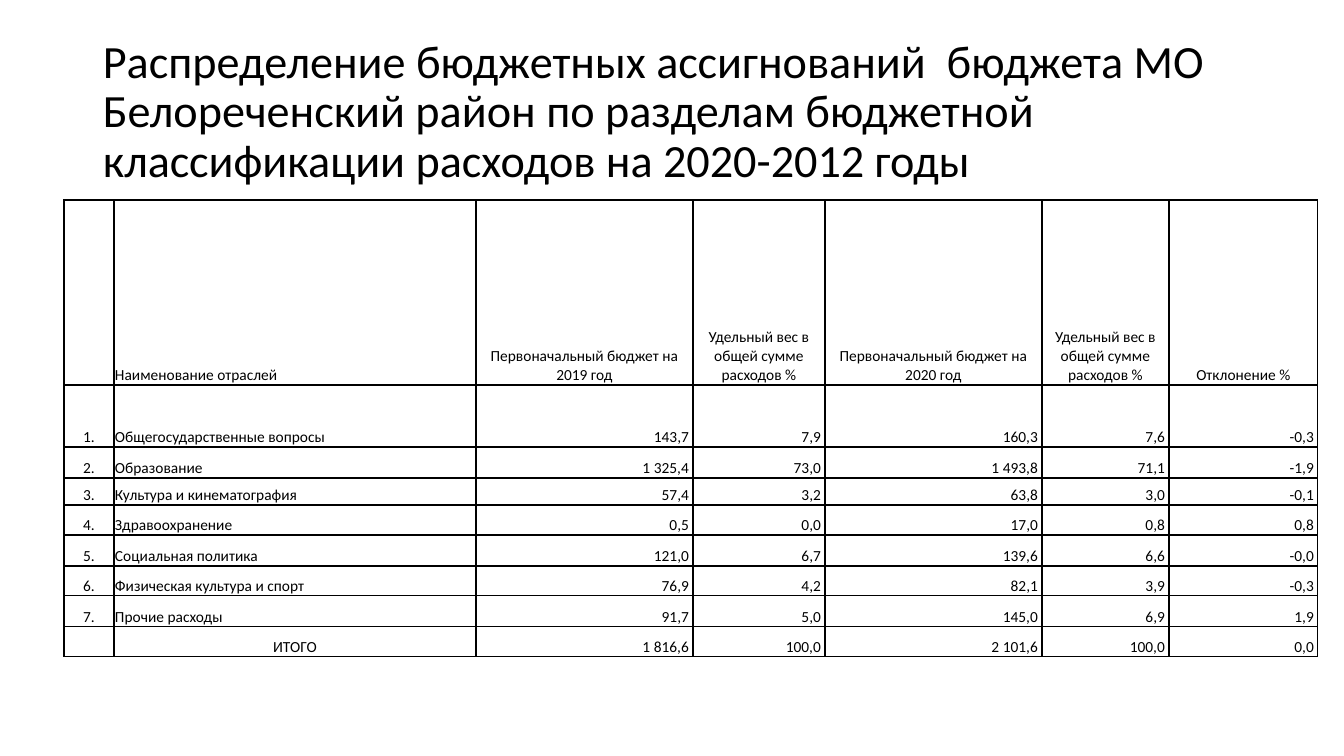
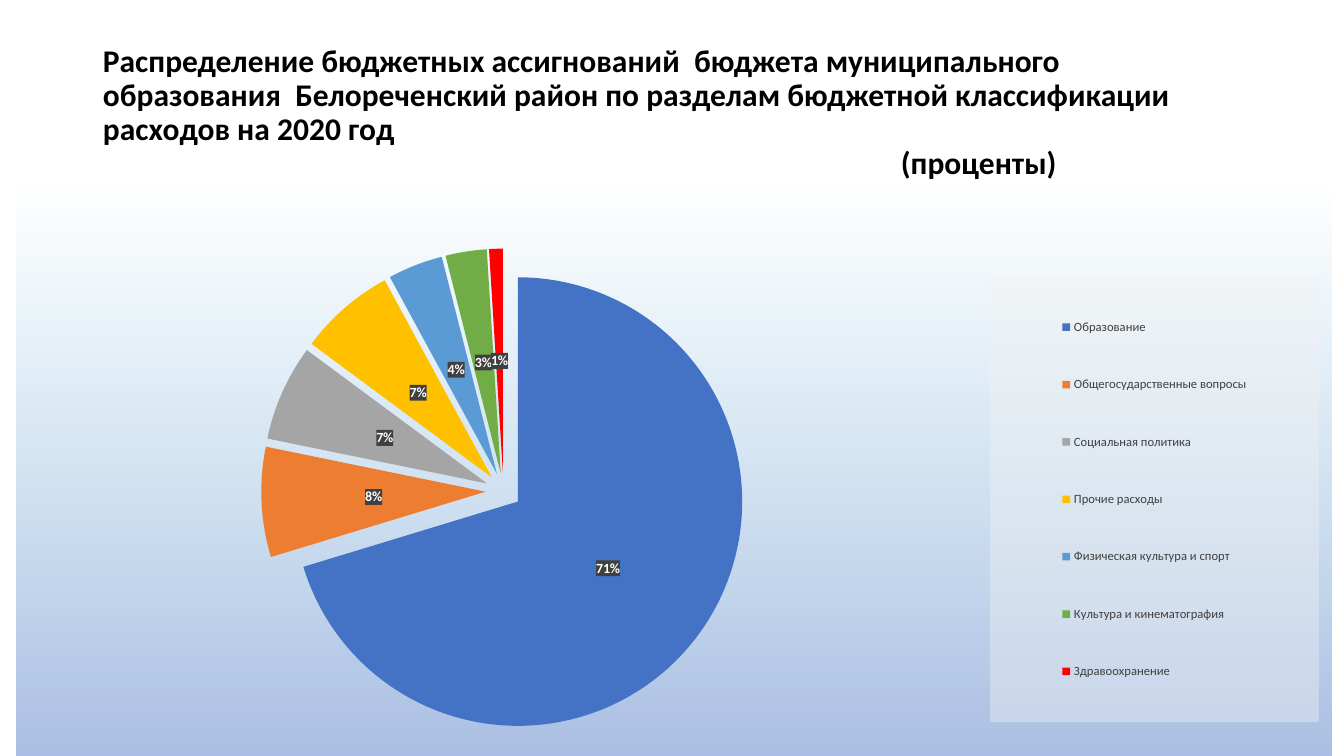
"""Build two slides on a district budget: a spending table and a pie chart."""
from dataclasses import dataclass

from lxml.etree import SubElement
from pptx import Presentation
from pptx.chart.data import CategoryChartData
from pptx.dml.color import RGBColor as Rgb
from pptx.enum.chart import XL_CHART_TYPE as ChartType
from pptx.enum.chart import XL_LABEL_POSITION as LabelPos
from pptx.enum.chart import XL_LEGEND_POSITION as LegendPos
from pptx.enum.text import MSO_ANCHOR as Anchor
from pptx.enum.text import PP_ALIGN as Align
from pptx.oxml import parse_xml
from pptx.oxml.ns import nsdecls, qn
from pptx.util import Pt

TABLE_TITLE = ["Распределение бюджетных ассигнований  бюджета МО Белореченский район "
               "по разделам бюджетной классификации расходов на 2020-2012 годы"]
CHART_TITLE = ["Распределение бюджетных ассигнований  бюджета муниципального образования  "
               "Белореченский район по разделам бюджетной классификации расходов на 2020 год",
               "(проценты)"]
HEADER = ("", "Наименование отраслей", "Первоначальный бюджет на 2019 год",
          "Удельный вес в общей сумме расходов %", "Первоначальный бюджет на 2020 год",
          "Удельный вес в общей сумме расходов %", "Отклонение %")
SECTORS = [
    ("1.", "Общегосударственные вопросы", "143,7", "7,9", "160,3", "7,6", "-0,3"),
    ("2.", "Образование", "1 325,4", "73,0", "1 493,8", "71,1", "-1,9"),
    ("3.", "Культура и кинематография", "57,4", "3,2", "63,8", "3,0", "-0,1"),
    ("4.", "Здравоохранение", "0,5", "0,0", "17,0", "0,8", "0,8"),
    ("5.", "Социальная политика", "121,0", "6,7", "139,6", "6,6", "-0,0"),
    ("6.", "Физическая культура и спорт", "76,9", "4,2", "82,1", "3,9", "-0,3"),
    ("7.", "Прочие расходы", "91,7", "5,0", "145,0", "6,9", "1,9"),
]
TOTAL = ("", "ИТОГО", "1 816,6", "100,0", "2 101,6", "100,0", "0,0")
SHARES = [
    ("Образование", 71, "4472C4"),
    ("Общегосударственные вопросы", 8, "ED7D31"),
    ("Социальная политика", 7, "A5A5A5"),
    ("Прочие расходы", 7, "FFC000"),
    ("Физическая культура и спорт", 4, "5B9BD5"),
    ("Культура и кинематография", 3, "70AD47"),
    ("Здравоохранение", 1, "FF0000"),
]

SLIDE_SIZE = (1344, 756)
TITLE_BOX = (93, 40, 1159, 146)
UNIT_INDENT = 798
TABLE_CORNER = (64, 200)
COLUMNS = (50, 362, 217, 132, 217, 127, 149)
ROWS = (185, 62, 31, 27, 30, 31, 30, 31, 30)
CHART_BOX = (17, 186, 1315, 570)
PIE_LAYOUT = (0.11, 0.11, 0.52, 0.85)
LEGEND_LAYOUT = (0.74, 0.16, 0.25, 0.78)


@dataclass(frozen=True)
class Theme:
    font: str = "Calibri"
    ink: str = "000000"
    legend_ink: str = "404040"
    label_ink: str = "FFFFFF"
    label_back: str = "404040"
    legend_back: str = "F2F2F2"
    sky: str = "A4D0E9"
    ground: str = "ABC0E4"
    table_title: float = 33
    chart_title: float = 22.5
    cell: float = 11
    label: float = 10
    legend: float = 9


THEME = Theme()


def px(length):
    return round(length * 63500 / 7)


def style(font, size, color=THEME.ink, bold=False):
    font.name, font.size, font.bold = THEME.font, Pt(size), bold
    font.color.rgb = Rgb.from_string(color)


def add_title(slide, lines, size, bold=False):
    frame = slide.shapes.add_textbox(*map(px, TITLE_BOX)).text_frame
    frame.word_wrap = True
    frame.vertical_anchor = Anchor.MIDDLE
    frame.text = "\n".join(lines)
    for line in frame.paragraphs:
        line.line_spacing = 0.9
        style(line.font, size, bold=bold)
    return frame


def add_borders(cell):
    properties = cell._tc.get_or_add_tcPr()
    for side in ("lnL", "lnR", "lnT", "lnB"):
        edge = SubElement(properties, qn(f"a:{side}"), w=str(Pt(1)))
        ink = SubElement(edge, qn("a:solidFill"))
        SubElement(ink, qn("a:srgbClr"), val=THEME.ink)


def alignment(row, column):
    if column == 1:
        return Align.CENTER if row == len(ROWS) - 1 else Align.LEFT
    return Align.RIGHT if row and column else Align.CENTER


def add_budget_table(slide):
    budget = slide.shapes.add_table(
        len(ROWS), len(COLUMNS), *map(px, TABLE_CORNER),
        px(sum(COLUMNS)), px(sum(ROWS))).table
    budget.first_row = budget.horz_banding = False
    for column, width in zip(budget.columns, COLUMNS):
        column.width = px(width)
    for row, height in zip(budget.rows, ROWS):
        row.height = px(height)
    for r, entries in enumerate([HEADER, *SECTORS, TOTAL]):
        for c, entry in enumerate(entries):
            cell = budget.cell(r, c)
            cell.text = entry
            cell.vertical_anchor = Anchor.BOTTOM
            align = alignment(r, c)
            cell.margin_left = cell.margin_top = px(1)
            cell.margin_right = px(4 if align == Align.RIGHT else 1)
            cell.margin_bottom = 0
            add_borders(cell)
            cell.fill.background()
            line = cell.text_frame.paragraphs[0]
            line.alignment = align
            style(line.font, THEME.cell)


def chart_fill(fill):
    return parse_xml(f'<c:spPr {nsdecls("c", "a")}>{fill}<a:ln><a:noFill/></a:ln></c:spPr>')


def solid(color, alpha=100):
    return (f'<a:solidFill><a:srgbClr val="{color}"><a:alpha val="{alpha * 1000}"/>'
            '</a:srgbClr></a:solidFill>')


def manual_layout(box, target=""):
    sizes = "".join(f'<c:{key} val="{value}"/>' for key, value in zip("xywh", box))
    return parse_xml(f'<c:layout {nsdecls("c")}><c:manualLayout>{target}'
                     '<c:xMode val="edge"/><c:yMode val="edge"/>'
                     f'{sizes}</c:manualLayout></c:layout>')


def add_share_chart(slide):
    data = CategoryChartData()
    data.categories = [name for name, _, _ in SHARES]
    data.add_series("2020", [share for _, share, _ in SHARES])
    chart = slide.shapes.add_chart(ChartType.PIE, *map(px, CHART_BOX), data).chart
    chart.has_title = False
    style(chart.font, THEME.label)
    space = chart._chartSpace.chart
    space.addnext(chart_fill(
        '<a:gradFill><a:gsLst>'
        f'<a:gs pos="0"><a:srgbClr val="{THEME.sky}"><a:alpha val="0"/></a:srgbClr></a:gs>'
        f'<a:gs pos="100000"><a:srgbClr val="{THEME.ground}"/></a:gs>'
        '</a:gsLst><a:lin ang="5400000" scaled="0"/></a:gradFill>'))

    area = space.plotArea
    for layout in area.findall(qn("c:layout")):
        area.remove(layout)
    area.insert(0, manual_layout(PIE_LAYOUT, '<c:layoutTarget val="inner"/>'))

    plot = chart.plots[0]
    plot.vary_by_categories = True
    series = plot.series[0]
    for index, (_, _, color) in enumerate(SHARES):
        slice_fill = series.points[index].format.fill
        slice_fill.solid()
        slice_fill.fore_color.rgb = Rgb.from_string(color)
    series._element.find(qn("c:tx")).addnext(
        parse_xml(f'<c:explosion {nsdecls("c")} val="8"/>'))

    labels = series.data_labels
    labels.show_value = True
    labels.number_format, labels.number_format_is_linked = '0"%"', False
    labels.position = LabelPos.CENTER
    style(labels.font, THEME.label, THEME.label_ink, bold=True)
    labels._element.find(qn("c:numFmt")).addnext(chart_fill(solid(THEME.label_back)))

    chart.has_legend = True
    legend = chart.legend
    legend.position = LegendPos.RIGHT
    legend.include_in_layout = False
    style(legend.font, THEME.legend, THEME.legend_ink)
    parts = legend._element
    for layout in parts.findall(qn("c:layout")):
        parts.remove(layout)
    parts.find(qn("c:legendPos")).addnext(manual_layout(LEGEND_LAYOUT))
    parts.find(qn("c:overlay")).addnext(chart_fill(solid(THEME.legend_back, 39)))


def main():
    deck = Presentation()
    deck.slide_width, deck.slide_height = map(px, SLIDE_SIZE)
    blank = deck.slide_layouts[6]

    table_slide = deck.slides.add_slide(blank)
    add_title(table_slide, TABLE_TITLE, THEME.table_title)
    add_budget_table(table_slide)

    chart_slide = deck.slides.add_slide(blank)
    heading = add_title(chart_slide, CHART_TITLE, THEME.chart_title, bold=True)
    heading.paragraphs[-1]._p.get_or_add_pPr().set("marL", str(px(UNIT_INDENT)))
    add_share_chart(chart_slide)

    deck.save("out.pptx")


if __name__ == "__main__":
    main()
